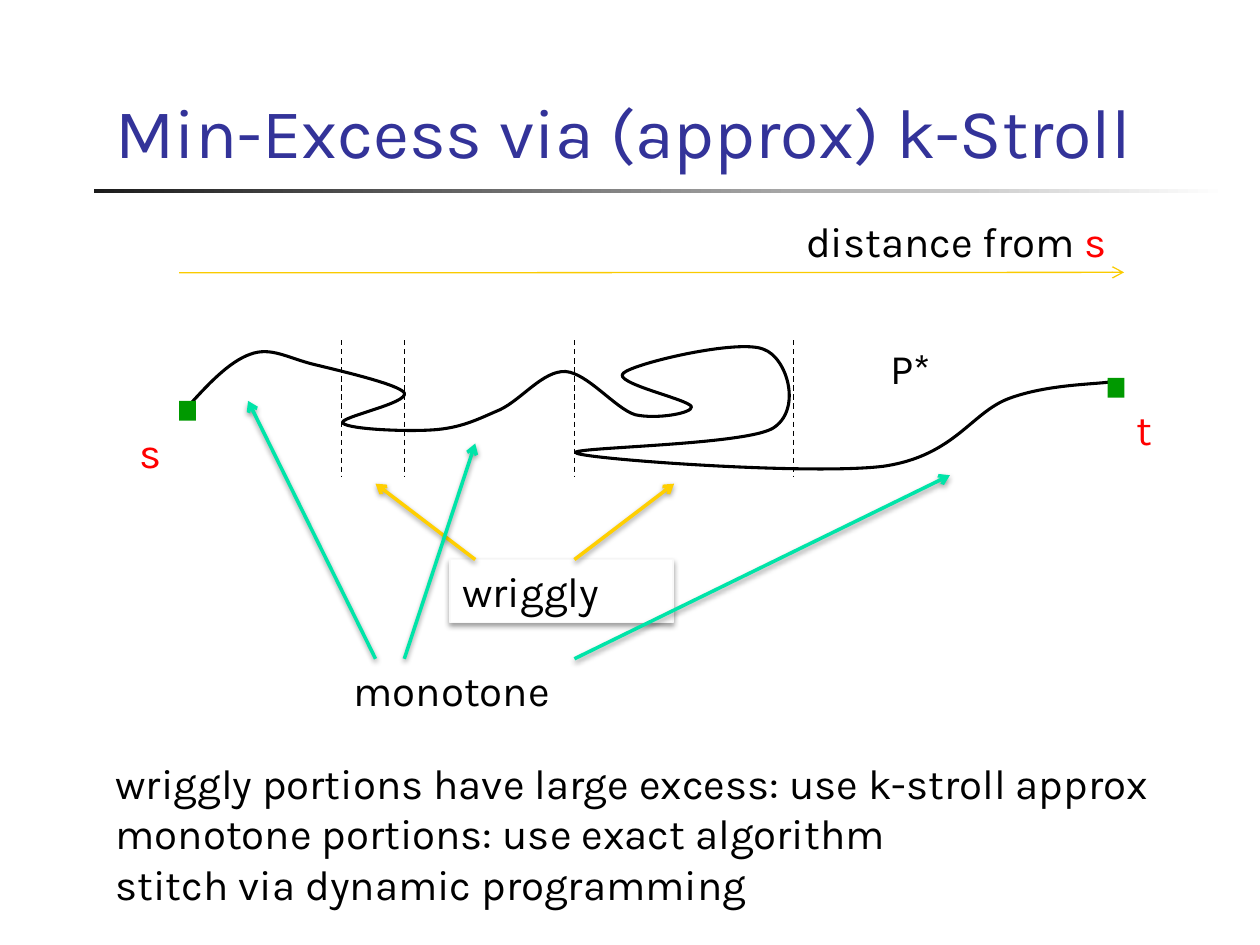
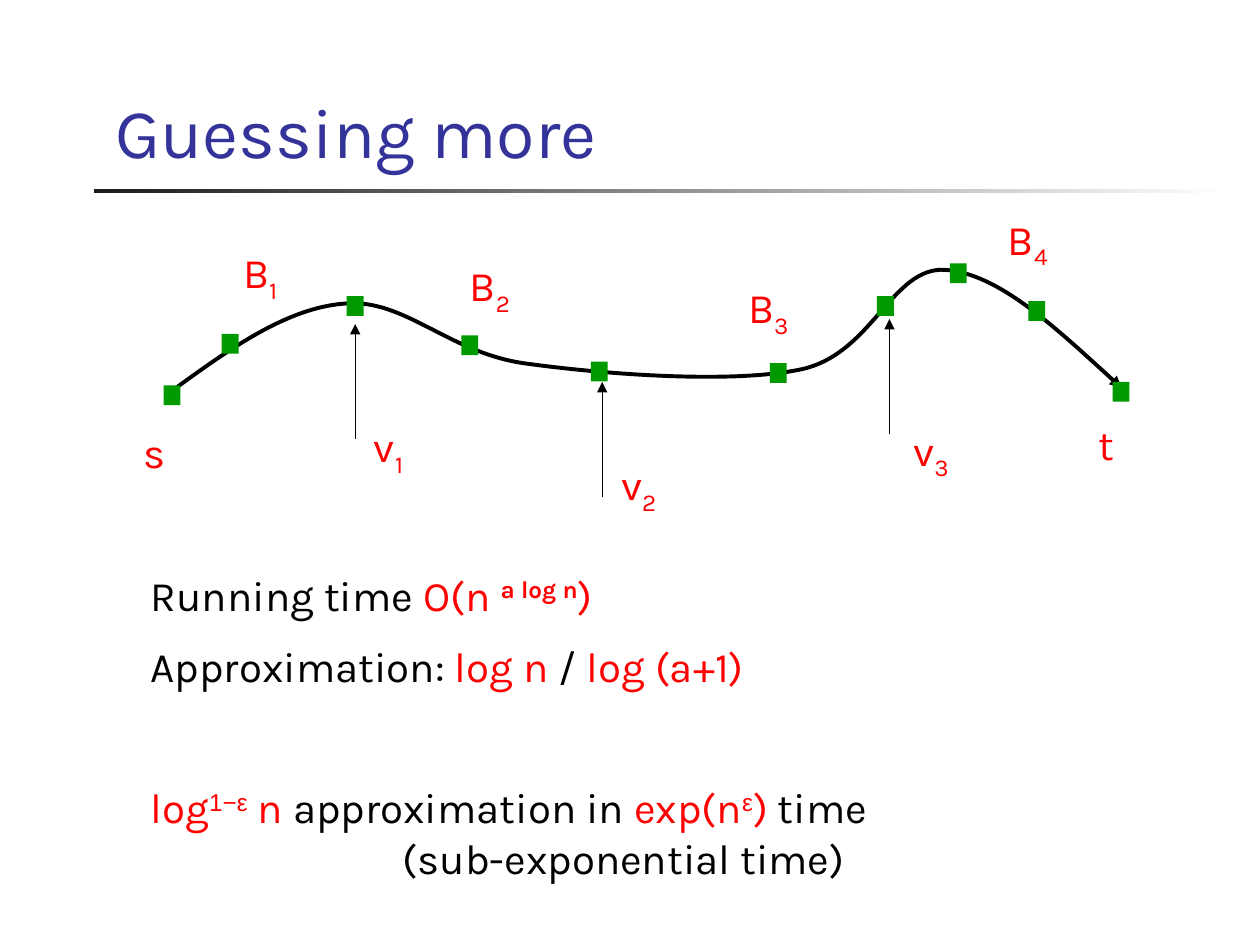
from lxml.etree import SubElement
from pptx import Presentation
from pptx.dml.color import RGBColor
from pptx.enum.dml import MSO_LINE
from pptx.enum.shapes import MSO_CONNECTOR, MSO_SHAPE
from pptx.enum.text import MSO_ANCHOR
from pptx.oxml.ns import qn
from pptx.util import Cm, Pt

COLORS = {
    "title": "333399", "ink": "000000", "red": "FF0000", "node": "009900",
    "axis": "FACB00", "wriggly": "FFCF01", "monotone": "00E4A8",
    "paper": "FFFFFF", "box edge": "F9F9F9", "band": "1C1C1C",
}
FONT = "Karla"
NODE_SIZE = (0.34, 0.4)
LABEL_SIZE = (1.63, 1.27)

# All positions are centimetres. A run is (text, colour, optional format).
STROLL_TITLE = "Min-Excess via (approx) k-Stroll"
STROLL_CURVE = [
    (3.76, 8.23),
    (4.19, 7.75), (4.62, 7.29), (5.05, 7.14),
    (5.46, 6.99), (5.79, 7.21), (6.3, 7.34),
    (6.83, 7.47), (8.05, 7.75), (8.15, 7.92),
    (8.26, 8.13), (6.81, 8.41), (6.91, 8.53),
    (7.04, 8.66), (8.28, 8.71), (8.81, 8.66),
    (9.35, 8.61), (9.68, 8.43), (10.08, 8.26),
    (10.52, 8.05), (10.95, 7.47), (11.4, 7.49),
    (11.84, 7.52), (12.4, 8.23), (12.8, 8.36),
    (13.23, 8.46), (13.97, 8.33), (13.94, 8.2),
    (13.89, 8.05), (12.32, 7.72), (12.57, 7.52),
    (12.8, 7.32), (14.88, 6.83), (15.39, 7.04),
    (15.88, 7.21), (16.18, 8.28), (15.57, 8.64),
    (14.94, 8.99), (11.25, 9.02), (11.63, 9.14),
    (12.01, 9.27), (16.36, 9.58), (17.81, 9.4),
    (19.25, 9.19), (19.58, 8.31), (20.35, 8.03),
    (21.11, 7.75), (22.05, 7.75), (22.38, 7.7),
]
STROLL_NODES = [(3.61, 8.08), (22.33, 7.62)]
DISTANCE_AXIS = ((3.61, 5.5), (22.66, 5.49))
PORTION_BORDERS = [6.88, 8.15, 11.58, 16.0]
BORDER_TOP, BORDER_BOTTOM = 6.86, 9.6
PORTION_ARROWS = [
    ("wriggly", (9.58, 11.28), (7.57, 9.75)),
    ("wriggly", (11.58, 11.28), (13.59, 9.75)),
    ("monotone", (7.57, 13.28), (5.0, 8.08)),
    ("monotone", (11.58, 13.28), (19.15, 9.58)),
    ("monotone", (8.15, 13.28), (9.58, 8.94)),
]
WRIGGLY_BOX = (9.07, 11.28, 4.5, 1.27)
STROLL_TEXTS = [
    ((22.66, 8.0, *LABEL_SIZE), [("t", "red")]),
    ((2.57, 8.48, *LABEL_SIZE), [("s", "red")]),
    ((6.88, 13.28, 8.08, 1.27), [("monotone", "ink")]),
    ((16.0, 4.22, 7.54, 1.27), [("distance from ", "ink"), ("s", "red")]),
    ((17.7, 6.78, 2.57, 1.27), [("P*", "ink")]),
]
STROLL_SUMMARY = [
    {"runs": [(line, "ink")]} for line in (
        "wriggly portions have large excess: use k-stroll approx",
        "monotone portions: use exact algorithm",
        "stitch via dynamic programming",
    )
]

GUESS_TITLE = "Guessing more"
GUESS_CURVE = [
    (3.48, 7.87),
    (4.62, 7.04), (5.79, 6.2), (6.96, 6.12),
    (8.15, 6.02), (9.02, 7.09), (10.54, 7.32),
    (12.09, 7.54), (14.76, 7.75), (16.18, 7.44),
    (17.6, 7.11), (17.98, 5.38), (19.05, 5.44),
    (20.12, 5.51), (21.36, 6.68), (22.61, 7.82),
]
GUESS_NODES = [
    (3.3, 7.77), (4.47, 6.73), (6.99, 5.97), (9.3, 6.76), (11.91, 7.29),
    (15.52, 7.32), (17.68, 5.97), (19.15, 5.31), (20.73, 6.07), (22.43, 7.7),
]
GUESS_ARROWS = [(7.16, 6.53), (12.14, 7.7), (17.93, 6.43)]
GUESS_ARROW_LENGTH = 2.32
GUESS_LABELS = [
    ("s", "", 2.64, 8.48), ("t", "", 21.89, 8.31),
    ("v", "1", 7.29, 8.36), ("v", "2", 12.27, 9.12), ("v", "3", 18.16, 8.43),
    ("B", "1", 4.65, 4.85), ("B", "2", 9.22, 5.11),
    ("B", "3", 14.83, 5.56), ("B", "4", 20.07, 4.17),
]
RAISED = {"baseline": 30}
RAISED_GREEK = {"baseline": 30, "font": "Arial"}
GUESS_RESULTS = [
    {"before": 12, "runs": [
        ("Running time ", "ink"), ("O(n ", "red"),
        ("a log n", "red", {"baseline": 30, "bold": True}), (")", "red")]},
    {"before": 12, "runs": [
        ("Approximation: ", "ink"), ("log n", "red"), (" / ", "ink"),
        ("log (a+1)", "red")]},
    {"before": 52, "runs": [
        ("log", "red"), ("1−ε", "red", RAISED_GREEK), (" n ", "red"),
        ("approximation in ", "ink"), ("exp(n", "red"),
        ("ε", "red", RAISED_GREEK), (") ", "red"), ("time", "ink")]},
    {"indent": 5.08, "runs": [("(sub-exponential time)", "ink")]},
]


def rgb(name):
    return RGBColor.from_string(COLORS[name])


def fill_text(frame, paragraphs, size=24):
    frame.word_wrap = True
    for index, content in enumerate(paragraphs):
        para = frame.paragraphs[0] if index == 0 else frame.add_paragraph()
        # Space above the first line has no effect at the top of a box.
        if index and "before" in content:
            para.space_before = Pt(content["before"])
        if "indent" in content:
            para._p.get_or_add_pPr().set("marL", str(Cm(content["indent"])))
        for text, color, *formats in content["runs"]:
            style = formats[0] if formats else {}
            span = para.add_run()
            span.text = text
            span.font.name = style.get("font", FONT)
            span.font.size = Pt(size)
            span.font.bold = style.get("bold", False)
            span.font.color.rgb = rgb(color)
            if "baseline" in style:
                span.font._element.set("baseline", str(style["baseline"] * 1000))


def add_text(page, place, paragraphs, size=24):
    box = page.shapes.add_textbox(*map(Cm, place))
    fill_text(box.text_frame, paragraphs, size)
    return box


def add_rectangle(page, place, color):
    box = page.shapes.add_shape(MSO_SHAPE.RECTANGLE, *map(Cm, place))
    box.shadow.inherit = False
    box.fill.solid()
    box.fill.fore_color.rgb = rgb(color)
    box.line.fill.background()
    return box


def add_nodes(page, corners):
    for corner in corners:
        add_rectangle(page, (*corner, *NODE_SIZE), "node")


def add_page(deck, title):
    """Add a slide with the shared title and fading band."""
    page = deck.slides.add_slide(deck.slide_layouts[6])
    band = add_rectangle(page, (1.9, 3.81, 22.86, 0.08), "band")
    band.fill.gradient()
    band.fill.gradient_angle = 0
    for stop, color, position in zip(band.fill.gradient_stops, ("band", "paper"), (0, 1)):
        stop.color.rgb = rgb(color)
        stop.position = position
    box = add_text(page, (2.08, 0.43, 22.71, 3.18), [{"runs": [(title, "title")]}], 40)
    box.text_frame.vertical_anchor = MSO_ANCHOR.BOTTOM
    return page


def style_line(line, color, width, head=None):
    line.color.rgb = rgb(color)
    line.width = Pt(width)
    if head:
        SubElement(line._get_or_add_ln(), qn("a:tailEnd"), type=head)


def add_soft_shadow(shape):
    properties = shape.element.spPr
    for effects in properties.findall(qn("a:effectLst")):
        properties.remove(effects)
    effects = SubElement(properties, qn("a:effectLst"))
    shadow = SubElement(effects, qn("a:outerShdw"), blurRad="40000", dist="20000",
                        dir="5400000", rotWithShape="0")
    tint = SubElement(shadow, qn("a:srgbClr"), val=COLORS["ink"])
    SubElement(tint, qn("a:alpha"), val="38000")


def add_line(page, start, end, color, width=0.75, head=None):
    line = page.shapes.add_connector(MSO_CONNECTOR.STRAIGHT, *map(Cm, (*start, *end)))
    style_line(line.line, color, width, head)
    SubElement(line.element.spPr, qn("a:effectLst"))
    return line


def add_curve(page, points, width, head=None):
    """Draw cubic curves: a start, then two controls and an end for each."""
    start, *rest = [(Cm(x), Cm(y)) for x, y in points]
    builder = page.shapes.build_freeform(*start)
    builder.add_line_segments(rest, close=False)
    curve = builder.convert_to_shape()
    curve.shadow.inherit = False
    curve.fill.background()
    style_line(curve.line, "ink", width, head)
    outline = curve.element.xpath(".//a:path")[0]
    segments = outline.findall(qn("a:lnTo"))
    for first in range(0, len(segments), 3):
        bend = SubElement(outline, qn("a:cubicBezTo"))
        for segment in segments[first:first + 3]:
            bend.append(segment[0])
            outline.remove(segment)


def build_stroll(deck):
    page = add_page(deck, STROLL_TITLE)
    add_text(page, (2.08, 15.14, 22.71, 3.33), STROLL_SUMMARY)
    add_curve(page, STROLL_CURVE, 1.75)
    add_nodes(page, STROLL_NODES)
    add_line(page, *DISTANCE_AXIS, "axis", head="arrow")
    for x in PORTION_BORDERS:
        border = add_line(page, (x, BORDER_TOP), (x, BORDER_BOTTOM), "ink")
        border.line.dash_style = MSO_LINE.DASH
    box = add_rectangle(page, WRIGGLY_BOX, "paper")
    style_line(box.line, "box edge", 0.75)
    add_soft_shadow(box)
    fill_text(box.text_frame, [{"runs": [("wriggly", "ink")]}])
    box.text_frame.vertical_anchor = MSO_ANCHOR.TOP
    box.text_frame.paragraphs[0].alignment = 1
    for kind, start, end in PORTION_ARROWS:
        add_soft_shadow(add_line(page, start, end, kind, 2, "arrow"))
    for place, runs in STROLL_TEXTS:
        add_text(page, place, [{"runs": runs}])


def build_guess(deck):
    page = add_page(deck, GUESS_TITLE)
    add_curve(page, GUESS_CURVE, 2.25, "triangle")
    add_nodes(page, GUESS_NODES)
    for x, tip in GUESS_ARROWS:
        add_line(page, (x, tip + GUESS_ARROW_LENGTH), (x, tip), "ink", head="triangle")
    for letter, index, x, y in GUESS_LABELS:
        runs = [(letter, "red")]
        if index:
            runs.append((index, "red", {"baseline": -25}))
        add_text(page, (x, y, *LABEL_SIZE), [{"runs": runs}])
    add_text(page, (2.79, 11.35, 18.01, 6.86), GUESS_RESULTS)


def main():
    deck = Presentation()
    deck.slide_width, deck.slide_height = Cm(25.4), Cm(19.05)
    build_stroll(deck)
    build_guess(deck)
    deck.save("out.pptx")


if __name__ == "__main__":
    main()
